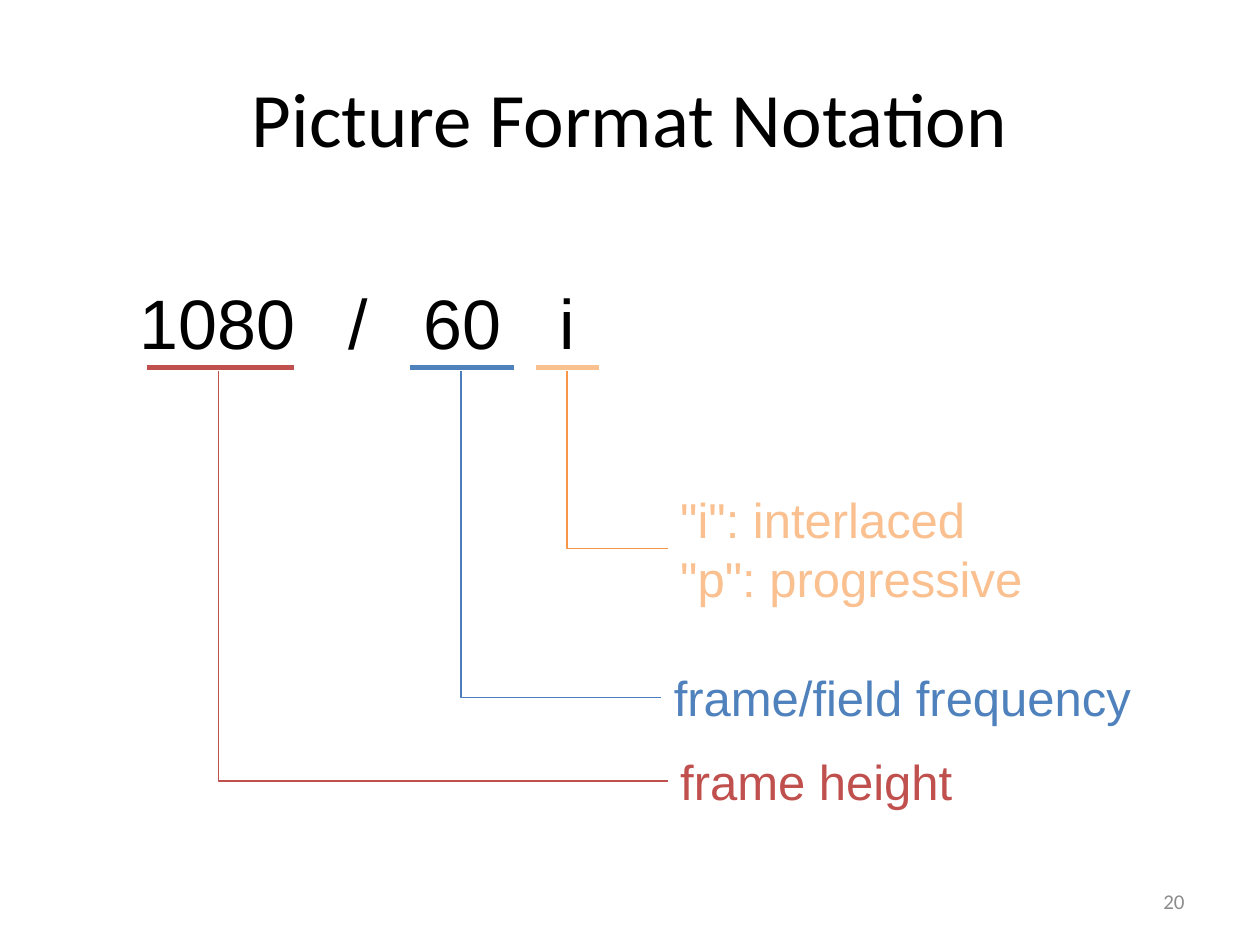
"""Build the picture format notation slide on a grid of 120 columns by 90 rows."""
from lxml import etree
from pptx import Presentation
from pptx import util as u
from pptx.dml.color import RGBColor
from pptx.enum import shapes, text
from pptx.oxml.ns import qn

RED, BLUE, PEACH = "C0504D", "4F81BD", "FAC090"
LEFT, CENTER, RIGHT = text.PP_ALIGN.LEFT, text.PP_ALIGN.CENTER, text.PP_ALIGN.RIGHT


def rgb(value):
    """Turn a hex string into a colour."""
    return RGBColor.from_string(value)


def write(tf, content, size=28, color="000000", font="Arial", align=LEFT,
          anchor=text.MSO_ANCHOR.TOP):
    """Fill a text frame with one paragraph per line of content."""
    tf.word_wrap, tf.vertical_anchor = False, anchor
    for i, line in enumerate(content.split("\n")):
        p = tf.add_paragraph() if i else tf.paragraphs[0]
        p.alignment = align
        r = p.add_run()
        r.text = line
        r.font.size, r.font.name = u.Pt(size), font
        r.font.color.rgb = rgb(color)


class Deck:
    """Hold the presentation, its grid and the current slide."""

    def __init__(self, cols=120, rows=90):
        """Start a 10 by 7.5 inch deck with one title slide."""
        self.prs = Presentation()
        self.prs.slide_width, self.prs.slide_height = u.Inches(10), u.Inches(7.5)
        self.cell = self.prs.slide_width / cols, self.prs.slide_height / rows
        self.s = self.prs.slides.add_slide(self.prs.slide_layouts[5])

    def grid(self, *places):
        """Turn alternating columns and rows into lengths."""
        return [u.Emu(round(n * self.cell[i % 2])) for i, n in enumerate(places)]

    def title(self, content, *box):
        """Place and fill the title placeholder."""
        sp = self.s.shapes.title
        sp.left, sp.top, sp.width, sp.height = self.grid(*box)
        write(sp.text_frame, content, 44, font="Calibri", align=CENTER,
              anchor=text.MSO_ANCHOR.MIDDLE)

    def label(self, content, *box, **style):
        """Add a text box."""
        write(self.s.shapes.add_textbox(*self.grid(*box)).text_frame, content, **style)

    def line(self, *ends, color, width=3.0, kind=shapes.MSO_CONNECTOR.STRAIGHT):
        """Add a connector without a shadow."""
        sp = self.s.shapes.add_connector(kind, *self.grid(*ends))
        sp.line.color.rgb, sp.line.width = rgb(color), u.Pt(width)
        etree.SubElement(sp._element.spPr, qn("a:effectLst"))
        return sp

    def elbow(self, *ends, color):
        """Add a connector that runs sideways and then up, with one bend."""
        sp = self.line(*ends, color=color, width=0.75, kind=shapes.MSO_CONNECTOR.ELBOW)
        sp._element.spPr.find(qn("a:prstGeom")).set("prst", "bentConnector2")


def main():
    """Draw the notation, its underlines and their explanations."""
    deck = Deck()
    deck.title("Picture Format Notation", 6, 3.6, 108, 15)
    deck.label("20", 86, 83.4, 28, 4.8, size=12, color="8C8C8C", font="Calibri",
               align=RIGHT, anchor=text.MSO_ANCHOR.MIDDLE)
    for part, left, width in (("1080", 12, 17.4), ("/", 32, 4.3),
                              ("60", 39, 10), ("i", 52, 4)):
        deck.label(part, left, 26, width, 9.2, size=40, align=CENTER)
    for start, end, color in ((14, 28, RED), (39, 49, BLUE), (51, 57, PEACH)):
        deck.line(start, 35, end, 35, color=color)
    notes = (
        ("frame height", 63.6, 71, 28.7, 6.8, RED, 20.8, RED),
        ("frame/field frequency", 63, 63, 46.6, 6.8, BLUE, 43.9, "4B7EBC"),
        ('"i": interlaced\n"p": progressive', 63.6, 46, 35.4, 12.5, PEACH, 54, "F79646"),
    )
    for content, left, top, width, height, color, stem, stroke in notes:
        deck.label(content, left, top, width, height, color=color)
        deck.elbow(left, top + height / 2, stem, 35.3, color=stroke)
    deck.prs.save("out.pptx")


if __name__ == "__main__":
    main()
